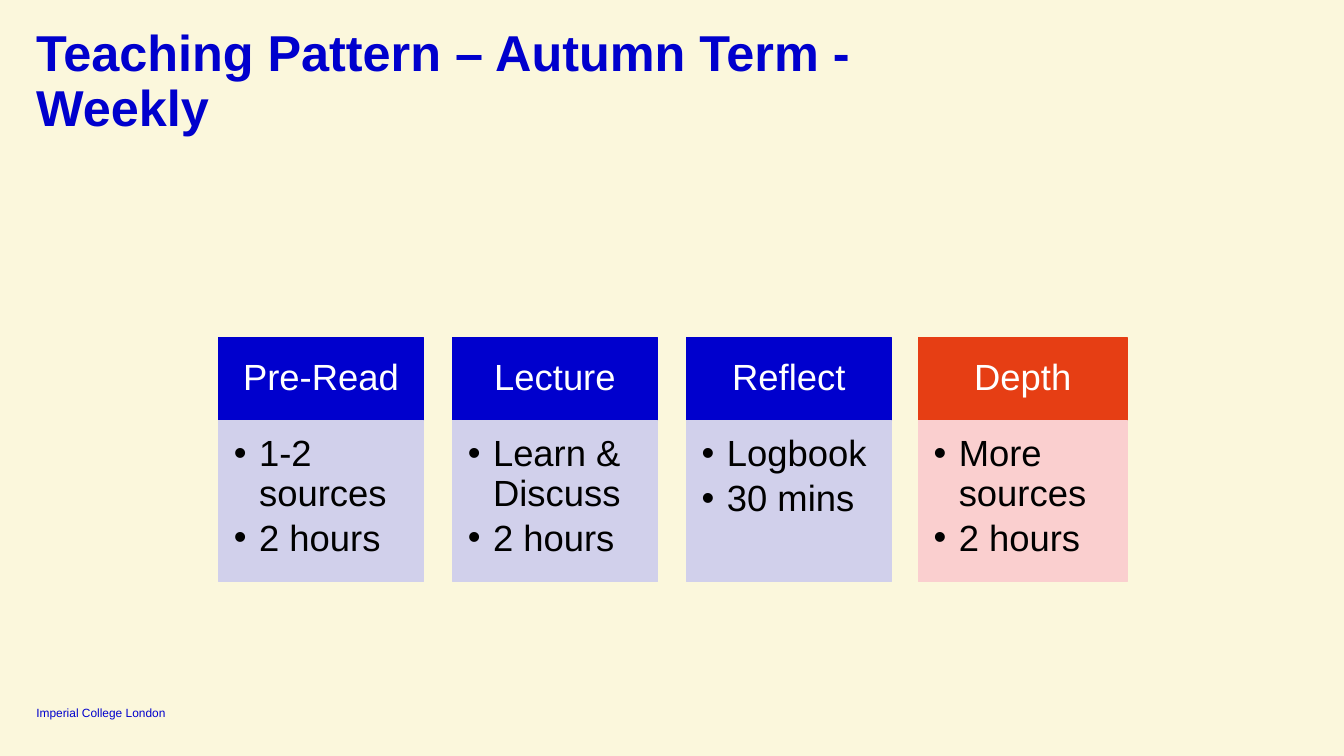
from dataclasses import dataclass

from lxml import etree
from pptx import Presentation
from pptx.dml.color import RGBColor
from pptx.enum.shapes import MSO_SHAPE as Preset
from pptx.enum.text import MSO_ANCHOR as Anchor, PP_ALIGN as Align
from pptx.oxml.ns import qn
from pptx.shapes.autoshape import Shape
from pptx.slide import Slide
from pptx.text.text import TextFrame, _Paragraph as Paragraph
from pptx.util import Inches, Pt


@dataclass(frozen=True)
class Theme:
    font: str = "Arial"
    background: str = "FBF7DC"
    blue: str = "0000CD"
    pale_blue: str = "D1D0EB"
    orange: str = "E63E14"
    pale_pink: str = "FACFCF"
    white: str = "FFFFFF"
    black: str = "000000"
    title_size: float = 36
    card_size: float = 26
    footer_size: float = 8.5


@dataclass(frozen=True)
class Card:
    heading: str
    points: tuple[str, ...]
    header_fill: str
    body_fill: str
    outset: float = 0


THEME = Theme()
CARDS = (
    Card("Pre-Read", ("1-2 sources", "2 hours"), THEME.blue, THEME.pale_blue),
    Card("Lecture", ("Learn & Discuss", "2 hours"), THEME.blue, THEME.pale_blue),
    Card("Reflect", ("Logbook", "30 mins"), THEME.blue, THEME.pale_blue),
    Card("Depth", ("More sources", "2 hours"), THEME.orange, THEME.pale_pink, 0.02),
)
CARD_LEFT, CARD_PITCH, CARD_WIDTH = 2.17, 2.32, 2.03
HEADER_TOP, HEADER_HEIGHT = 3.35, 0.82
BODY_HEIGHT = 1.6


def set_margins(text_frame: TextFrame, left: float, top: float, right: float, bottom: float) -> None:
    text_frame.margin_left, text_frame.margin_top = Inches(left), Inches(top)
    text_frame.margin_right, text_frame.margin_bottom = Inches(right), Inches(bottom)
    text_frame.word_wrap = True


def style_text(paragraph: Paragraph, size: float, color: str, bold: bool = False) -> None:
    paragraph.line_spacing = 0.9
    for run in paragraph.runs:
        run.font.name = THEME.font
        run.font.size = Pt(size)
        run.font.bold = bold
        run.font.color.rgb = RGBColor.from_string(color)


def add_bullet(paragraph: Paragraph) -> None:
    properties = paragraph._p.get_or_add_pPr()
    properties.set("marL", str(Inches(0.25)))
    properties.set("indent", str(Inches(-0.25)))
    etree.SubElement(properties, qn("a:buFont")).set("typeface", THEME.font)
    etree.SubElement(properties, qn("a:buChar")).set("char", "•")


def add_label(slide: Slide, text: str, top: float, width: float, height: float,
              size: float, anchor: Anchor, bold: bool = False) -> None:
    box = slide.shapes.add_textbox(Inches(0.36), Inches(top), Inches(width), Inches(height))
    text_frame = box.text_frame
    set_margins(text_frame, 0, 0, 0, 0)
    text_frame.vertical_anchor = anchor
    text_frame.text = text
    style_text(text_frame.paragraphs[0], size, THEME.blue, bold)


def add_panel(slide: Slide, left: float, top: float, width: float, height: float, fill: str) -> Shape:
    panel = slide.shapes.add_shape(
        Preset.RECTANGLE, Inches(left), Inches(top), Inches(width), Inches(height))
    panel.shadow.inherit = False
    color = RGBColor.from_string(fill)
    panel.fill.solid()
    panel.fill.fore_color.rgb = color
    panel.line.color.rgb = color
    panel.line.width = Pt(1)
    return panel


def add_card(slide: Slide, card: Card, column: int) -> None:
    left = CARD_LEFT + column * CARD_PITCH - card.outset
    width = CARD_WIDTH + 2 * card.outset

    header = add_panel(slide, left, HEADER_TOP, width, HEADER_HEIGHT, card.header_fill)
    set_margins(header.text_frame, 0.2, 0.12, 0.2, 0.12)
    header.text_frame.vertical_anchor = Anchor.MIDDLE
    header.text_frame.text = card.heading
    heading = header.text_frame.paragraphs[0]
    heading.alignment = Align.CENTER
    style_text(heading, THEME.card_size, THEME.white)

    body = add_panel(slide, left, HEADER_TOP + HEADER_HEIGHT, width, BODY_HEIGHT, card.body_fill)
    set_margins(body.text_frame, 0.15, 0.15, 0.2, 0.23)
    body.text_frame.vertical_anchor = Anchor.TOP
    body.text_frame.text = "\n".join(card.points)
    for paragraph in body.text_frame.paragraphs:
        add_bullet(paragraph)
        paragraph.alignment = Align.LEFT
        paragraph.space_after = Pt(4)
        style_text(paragraph, THEME.card_size, THEME.black)


def main() -> None:
    presentation = Presentation()
    presentation.slide_width = Inches(13.33)
    presentation.slide_height = Inches(7.5)
    slide = presentation.slides.add_slide(presentation.slide_layouts[6])
    slide.background.fill.solid()
    slide.background.fill.fore_color.rgb = RGBColor.from_string(THEME.background)

    add_label(slide, "Imperial College London", 6.99, 1.55, 0.15, THEME.footer_size, Anchor.BOTTOM)
    add_label(slide, "Teaching Pattern – Autumn Term - Weekly", 0.28, 9.57, 0.58,
              THEME.title_size, Anchor.TOP, bold=True)
    for column, card in enumerate(CARDS):
        add_card(slide, card, column)
    presentation.save("out.pptx")


if __name__ == "__main__":
    main()
